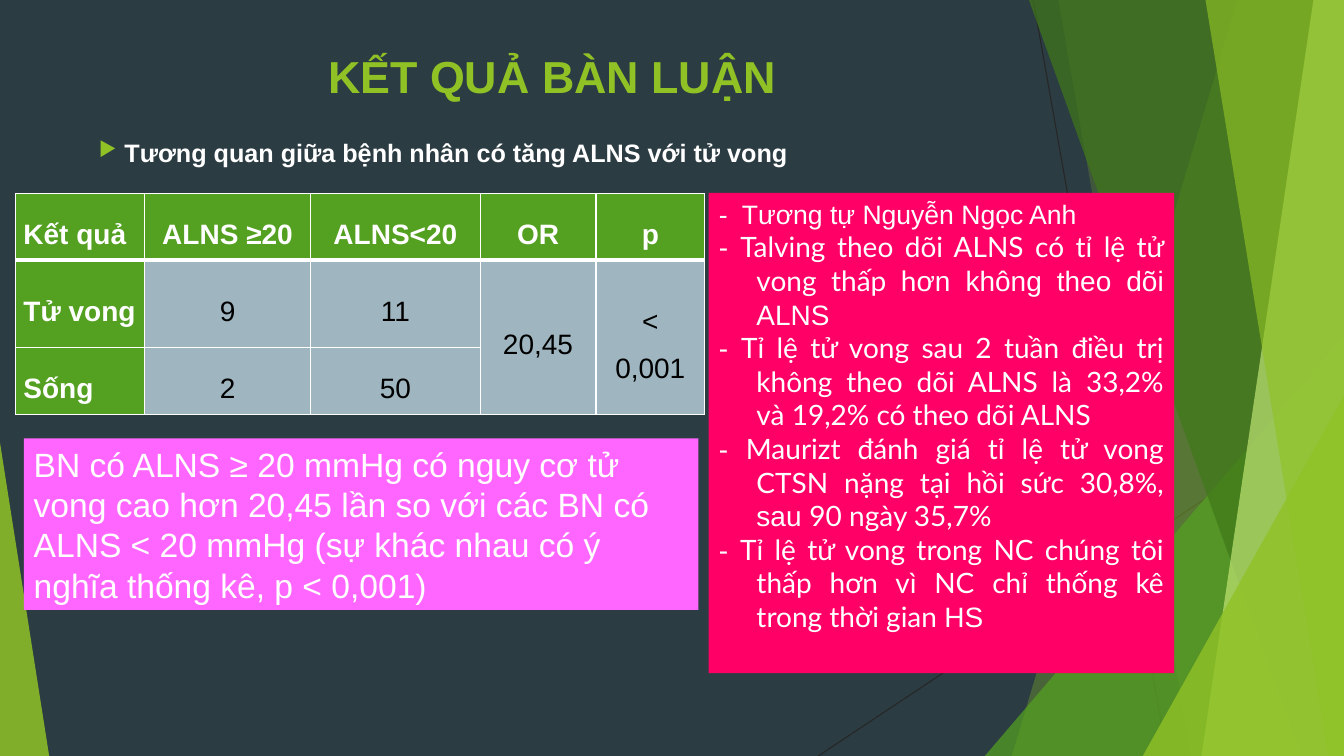
from dataclasses import dataclass

from lxml import etree
from pptx import Presentation
from pptx.dml.color import RGBColor
from pptx.enum.shapes import MSO_CONNECTOR, MSO_SHAPE
from pptx.enum.text import MSO_ANCHOR, MSO_AUTO_SIZE, PP_ALIGN
from pptx.oxml.ns import qn
from pptx.util import Cm, Pt

LEFT, CENTER, JUSTIFY = PP_ALIGN.LEFT, PP_ALIGN.CENTER, PP_ALIGN.JUSTIFY
TOP, MIDDLE = MSO_ANCHOR.TOP, MSO_ANCHOR.MIDDLE
NO_FIT = MSO_AUTO_SIZE.NONE
STRAIGHT = MSO_CONNECTOR.STRAIGHT
RECT, TRIANGLE = MSO_SHAPE.RECTANGLE, MSO_SHAPE.ISOSCELES_TRIANGLE


@dataclass(frozen=True)
class Theme:
    """Colours, fonts and type sizes of the slide."""
    bg: str = "2C3C43"
    lime: str = "90C226"
    green: str = "54A021"
    forest: str = "3F7819"
    pale: str = "C0E474"
    line: str = "262626"
    cell: str = "9FB6C0"
    pink: str = "FF0066"
    violet: str = "FF66FF"
    white: str = "FFFFFF"
    black: str = "000000"
    sans: str = "Arial"
    alt: str = "Lato"
    title: int = 32
    note: int = 24
    body: int = 20
    first: int = 19
    lead: int = 18


T = Theme()

DISCUSSION = [
    [("-  Tương tự Nguyễn Ngọc Anh", T.sans)],
    [("- ", T.sans), ("Talving theo dõi ALNS có tỉ lệ tử vong thấp h", T.alt),
     ("ơn không theo dõi ALNS", T.sans)],
    [("- ", T.sans), ("Tỉ lệ tử vong sau 2 tuần điều trị không theo dõi ALNS "
                      "là 33,2% và 19,2% có theo dõi ALNS", T.alt)],
    [("- ", T.sans), ("Maurizt đánh giá tỉ lệ tử vong CTSN nặng tại hồi sức 30,8%, ", T.alt),
     ("sau ", T.sans), ("90 ngày 35,7%", T.alt)],
    [("- ", T.sans), ("Tỉ lệ tử vong trong NC chúng tôi thấp hơn vì NC chỉ "
                      "thống kê trong thời gian ", T.alt), ("HS", T.sans)],
]
RESULTS = [
    ["Kết quả", "ALNS ≥20", "ALNS<20", "OR", "p"],
    ["Tử vong", "9", "11", "20,45", "< 0,001"],
    ["Sống", "2", "50", "", ""],
]
COL_WIDTHS = [3.24, 4.19, 4.27, 2.92, 2.74]
ROW_HEIGHTS = [1.68, 2.2, 1.68]


def add_text(p, text, size=T.body, font=T.sans, color=T.white, bold=False):
    """Append a formatted run to a paragraph."""
    r = p.add_run()
    r.text = text
    r.font.size, r.font.name, r.font.bold = Pt(size), font, bold
    r.font.color.rgb = RGBColor.from_string(color)


def paint(shape, color, alpha=100):
    """Give a shape a plain fill with no outline or shadow."""
    shape.fill.solid()
    shape.fill.fore_color.rgb = RGBColor.from_string(color)
    shape.line.fill.background()
    if alpha < 100:
        clr = shape.element.spPr.find(".//" + qn("a:srgbClr"))
        etree.SubElement(clr, qn("a:alpha"), val=str(alpha * 1000))


def place(shape, box):
    """Move and size a shape to a box in centimetres."""
    shape.left, shape.top, shape.width, shape.height = map(Cm, box)


def add_backdrop(s, box):
    """Draw the green facets and thin lines behind the content."""
    x, y, w, h = box
    right, bottom = x + w, y + h
    group = s.shapes.add_group_shape()
    shapes = group.shapes
    for x1, y1, x2, y2 in [(26.04, y, 29.41, bottom), (right, 10.24, 20.62, bottom)]:
        cxn = shapes.add_connector(STRAIGHT, Cm(x1), Cm(y1), Cm(x2), Cm(y2))
        cxn.line.color.rgb = RGBColor.from_string(T.line)
        cxn.line.width = Pt(0.75)
        etree.SubElement(cxn.element.spPr, qn("a:effectLst"))

    def add_facet(top_x, bottom_x, color, alpha):
        fb = shapes.build_freeform(Cm(top_x), Cm(y))
        corners = [(right, y), (right, bottom), (bottom_x, bottom)]
        fb.add_line_segments([(Cm(a), Cm(b)) for a, b in corners])
        finish(fb.convert_to_shape(), color, alpha)

    def add_triangle(left, top, width, apex, color, alpha):
        sp = shapes.add_shape(TRIANGLE, Cm(left), Cm(top), Cm(width), Cm(bottom - top))
        sp.adjustments[0] = apex
        finish(sp, color, alpha)

    def finish(sp, color, alpha):
        sp.shadow.inherit = False
        paint(sp, color, alpha)

    add_facet(31.19, 25.5, T.lime, 30)
    add_facet(26.67, 30.02, T.lime, 20)
    add_triangle(24.82, 8.46, right - 24.82, 1, T.green, 72)
    add_facet(25.93, 32.79, T.forest, 70)
    add_facet(33.1, 30.28, T.pale, 70)
    add_facet(30.38, 33.48, T.lime, 65)
    add_triangle(28.8, 9.98, right - 28.8, 1, T.lime, 80)
    add_triangle(x, 11.15, 1.24, 0, T.lime, 85)
    s.shapes.element.insert(2, group.element)


def add_title(s, box):
    """Fill the title placeholder."""
    sp = s.shapes.title
    place(sp, box)
    tf = sp.text_frame
    tf.auto_size, tf.vertical_anchor = NO_FIT, MIDDLE
    p = tf.paragraphs[0]
    p.alignment = CENTER
    add_text(p, "KẾT QUẢ BÀN LUẬN", size=T.title, color=T.lime, bold=True)


def add_lead(s, box):
    """Add the bulleted line above the table."""
    tf = s.shapes.add_textbox(*map(Cm, box)).text_frame
    tf.word_wrap = True
    p = tf.paragraphs[0]
    p.space_before = Pt(10)
    pPr = p._p.get_or_add_pPr()
    clr = etree.SubElement(pPr, qn("a:buClr"))
    etree.SubElement(clr, qn("a:srgbClr"), val=T.lime)
    etree.SubElement(pPr, qn("a:buSzPct"), val="80000")
    etree.SubElement(pPr, qn("a:buChar"), char="▶")
    add_text(p, " ", size=T.lead)
    add_text(p, "Tương quan giữa bệnh nhân có tăng ALNS với tử vong", size=T.lead, bold=True)


def add_discussion(s, box):
    """Fill the body placeholder with the comparison to other studies."""
    sp = s.placeholders[1]
    place(sp, box)
    paint(sp, T.pink)
    tf = sp.text_frame
    tf.auto_size, tf.vertical_anchor = NO_FIT, TOP
    for i, runs in enumerate(DISCUSSION):
        p = tf.add_paragraph() if i else tf.paragraphs[0]
        p.alignment, p.space_before = JUSTIFY, Pt(0)
        pPr = p._p.get_or_add_pPr()
        pPr.set("marL", str(Cm(0.95)))
        pPr.set("indent", str(-Cm(0.95)))
        etree.SubElement(pPr, qn("a:buNone"))
        for text, font in runs:
            add_text(p, text, size=T.body if i else T.first, font=font)


def set_borders(cell, **widths):
    """Draw white cell borders with the given widths in points."""
    tcPr = cell._tc.get_or_add_tcPr()
    for side in "LRTB":
        ln = etree.SubElement(tcPr, qn("a:ln" + side), w=str(Pt(widths.get(side, 1))))
        fill = etree.SubElement(ln, qn("a:solidFill"))
        etree.SubElement(fill, qn("a:srgbClr"), val=T.white)


def add_results(s, box):
    """Add the table of outcomes by ALNS group."""
    tbl = s.shapes.add_table(len(RESULTS), len(COL_WIDTHS), *map(Cm, box)).table
    for col, width in zip(tbl.columns, COL_WIDTHS):
        col.width = Cm(width)
    for row, height in zip(tbl.rows, ROW_HEIGHTS):
        row.height = Cm(height)
    for c in (3, 4):
        tbl.cell(1, c).merge(tbl.cell(2, c))
    for r, texts in enumerate(RESULTS):
        for c, text in enumerate(texts):
            cell, head = tbl.cell(r, c), r == 0 or c == 0
            set_borders(cell, T=3 if r == 1 else 1, B=3 if r == 0 else 1)
            cell.fill.solid()
            cell.fill.fore_color.rgb = RGBColor.from_string(T.green if head else T.cell)
            cell.vertical_anchor = MIDDLE
            cell.margin_left = cell.margin_right = Cm(0.19)
            cell.margin_top = cell.margin_bottom = 0
            if text:
                p = cell.text_frame.paragraphs[0]
                p.alignment, p.line_spacing = CENTER if c else LEFT, 1.5
                add_text(p, text, color=T.white if head else T.black, bold=head)


def add_conclusion(s, box):
    """Add the violet box with the reading of the table."""
    sp = s.shapes.add_shape(RECT, *map(Cm, box))
    sp.shadow.inherit = False
    paint(sp, T.violet)
    tf = sp.text_frame
    tf.word_wrap, tf.vertical_anchor = True, TOP
    p = tf.paragraphs[0]
    p.alignment = LEFT
    add_text(p, "BN có ALNS ≥ 20 mmHg có nguy cơ tử vong cao hơn 20,45 lần so với các BN có "
                "ALNS < 20 mmHg (sự khác nhau có ý nghĩa thống kê, p < 0,001)", size=T.note)


def main():
    """Build and save the slide."""
    prs = Presentation()
    prs.slide_width, prs.slide_height = Cm(33.87), Cm(19.05)
    s = prs.slides.add_slide(prs.slide_layouts[1])
    s.background.fill.solid()
    s.background.fill.fore_color.rgb = RGBColor.from_string(T.bg)
    add_backdrop(s, (0, 0, 33.87, 19.05))
    add_title(s, (1.98, 1.09, 23.88, 1.65))
    add_discussion(s, (17.86, 4.86, 11.73, 12.1))
    add_results(s, (0.4, 4.88, sum(COL_WIDTHS), sum(ROW_HEIGHTS)))
    add_conclusion(s, (0.6, 11.05, 17, 4.32))
    add_lead(s, (2.24, 3.33, 20.3, 1.02))
    prs.save("out.pptx")


if __name__ == "__main__":
    main()
